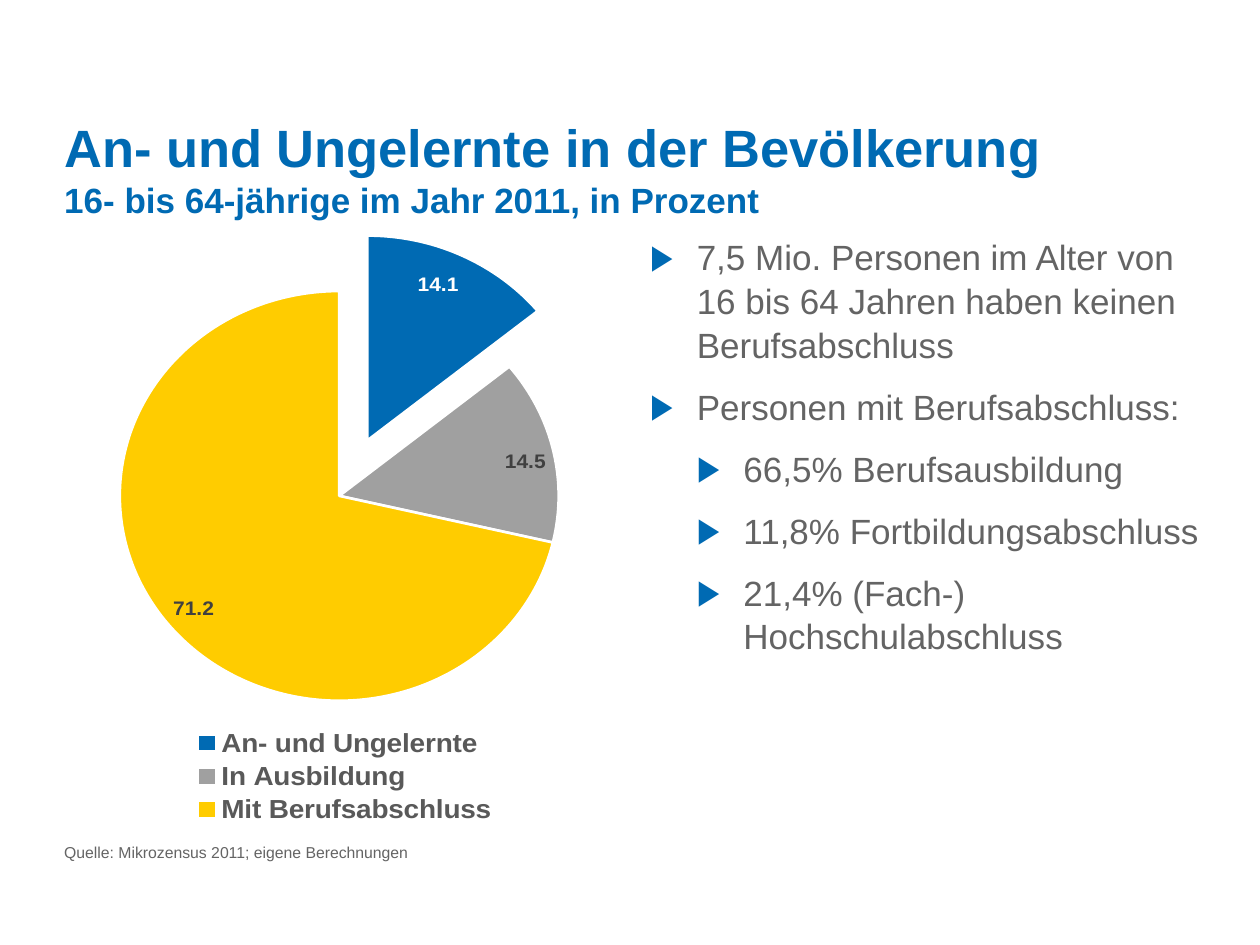
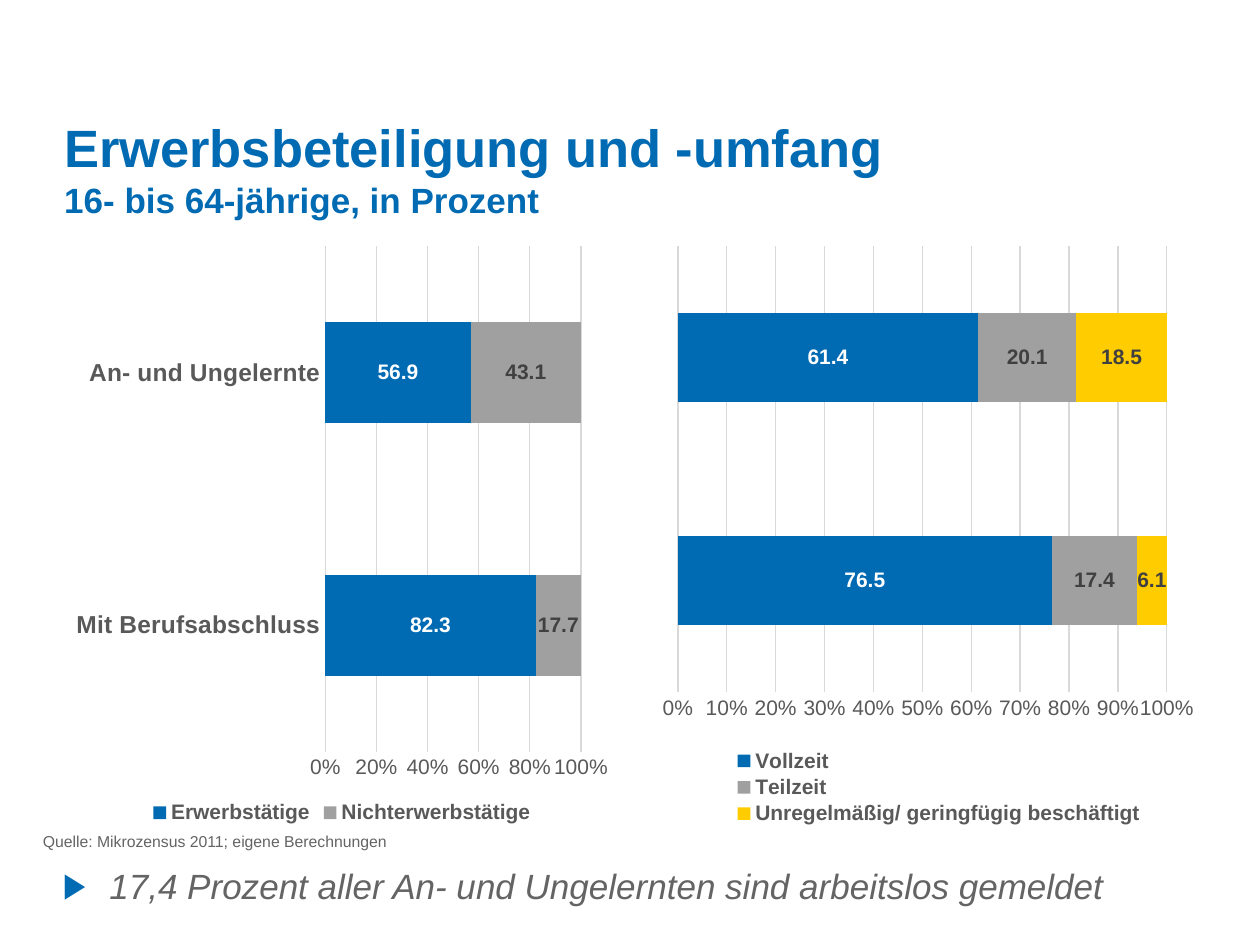
from dataclasses import dataclass
from typing import NamedTuple, Optional

from pptx import Presentation
from pptx.chart.data import CategoryChartData
from pptx.dml.color import RGBColor
from pptx.enum.chart import XL_CHART_TYPE, XL_LABEL_POSITION, XL_LEGEND_POSITION, XL_TICK_MARK
from pptx.enum.text import MSO_ANCHOR
from pptx.oxml import parse_xml
from pptx.oxml.ns import nsdecls, qn
from pptx.util import Inches, Pt

# Shared look
FONT = "Arial"
BLUE, GREY, YELLOW = PALETTE = ("006AB3", "A0A0A0", "FFCC00")
TEXT, AXIS, LABEL, GRID, WHITE = "646464", "595959", "404040", "D9D9D9", "FFFFFF"
SOURCE = "Quelle: Mikrozensus 2011; eigene Berechnungen"

# Two-column grid, in inches
MARGIN, COLUMN, GUTTER = 0.51, 4.41, 0.24
FULL = 2 * COLUMN + GUTTER
BODY_TOP, BODY_HEIGHT = 1.86, 4.72
INDENT = 0.37


class Box(NamedTuple):
    left: float
    top: float
    width: float
    height: float


class Bullet(NamedTuple):
    text: str
    level: int = 0
    italic: bool = False


@dataclass
class BarChart:
    column: int
    categories: tuple[str, ...]
    series: dict[str, tuple[float, ...]]
    plot: Box
    step: float
    show_categories: bool = True
    legend: Optional[Box] = None


def rgb(color: str) -> RGBColor:
    return RGBColor.from_string(color)


def column_box(column: int) -> Box:
    return Box(MARGIN + column * (COLUMN + GUTTER), BODY_TOP, COLUMN, BODY_HEIGHT)


def style_font(font, size: float, color: str, bold: bool = False, italic: bool = False) -> None:
    font.name, font.size = FONT, Pt(size)
    font.bold, font.italic = bold, italic
    font.color.rgb = rgb(color)


def fill_shape(fmt, color: str) -> None:
    fmt.fill.solid()
    fmt.fill.fore_color.rgb = rgb(color)


# Text
def add_text_frame(s, box: Box, anchor=MSO_ANCHOR.TOP, inset: Optional[float] = 0):
    tf = s.shapes.add_textbox(*map(Inches, box)).text_frame
    tf.word_wrap = True
    tf.vertical_anchor = anchor
    if inset is not None:
        tf.margin_left = tf.margin_right = tf.margin_top = tf.margin_bottom = Inches(inset)
    return tf


def add_run(p, text: str, size: float, color: str, **style: bool) -> None:
    r = p.add_run()
    r.text = text
    style_font(r.font, size, color, **style)


def add_title(s, title: str, subtitle: str) -> None:
    tf = add_text_frame(s, Box(MARGIN, 0.91, FULL, 0.84), MSO_ANCHOR.BOTTOM)
    p = tf.paragraphs[0]
    add_run(p, title, 30, BLUE, bold=True)
    p.add_line_break()
    add_run(p, subtitle, 20, BLUE, bold=True)


def add_source(s, left: float, top: float) -> None:
    tf = add_text_frame(s, Box(left, top, FULL, 0.2))
    add_run(tf.paragraphs[0], SOURCE, 9, TEXT)


def add_bullets(tf, bullets: list[Bullet]) -> None:
    for i, bullet in enumerate(bullets):
        p = tf.add_paragraph() if i else tf.paragraphs[0]
        ppr = p._p.get_or_add_pPr()
        ppr.set("marL", str(Inches(INDENT * (bullet.level + 1))))
        ppr.set("indent", str(-Inches(INDENT)))
        for xml in (
            f'<a:buClr {nsdecls("a")}><a:srgbClr val="{BLUE}"/></a:buClr>',
            f'<a:buFont {nsdecls("a")} typeface="{FONT}"/>',
            f'<a:buChar {nsdecls("a")} char="▶"/>',
        ):
            ppr.append(parse_xml(xml))
        if len(bullets) > 1:
            p.line_spacing = 1.04
        if i:
            p.space_before = Pt(10.5)
        add_run(p, bullet.text, 20, TEXT, italic=bullet.italic)


# Charts
def set_layout(parent, index: int, area: Box, inner: bool = False) -> None:
    """Place a plot area or legend by shares of the chart's size."""
    for old in parent.findall(qn("c:layout")):
        parent.remove(old)
    target = '<c:layoutTarget val="inner"/>' if inner else ""
    modes = '<c:xMode val="edge"/><c:yMode val="edge"/>'
    sizes = "".join(f'<c:{k} val="{v}"/>' for k, v in zip("xywh", area))
    parent.insert(index, parse_xml(
        f'<c:layout {nsdecls("c")}><c:manualLayout>{target}{modes}{sizes}'
        "</c:manualLayout></c:layout>"))


def add_chart(s, kind, column: int, categories, series, plot: Box,
              legend: Optional[Box], legend_size: float):
    data = CategoryChartData()
    data.categories = categories
    for name, values in series.items():
        data.add_series(name, values)
    chart = s.shapes.add_chart(kind, *map(Inches, column_box(column)), data).chart
    chart.has_title = False
    style_font(chart.font, 10, "000000")
    set_layout(chart._chartSpace.chart.plotArea, 0, plot, inner=True)
    chart.has_legend = True
    chart.legend.position = XL_LEGEND_POSITION.BOTTOM
    chart.legend.include_in_layout = False
    style_font(chart.legend.font, legend_size, AXIS, bold=True)
    if legend:
        set_layout(chart.legend._element, 1, legend)
    return chart


def style_labels(labels, position, color: str, number_format: str) -> None:
    labels.show_value = True
    labels.number_format, labels.number_format_is_linked = number_format, False
    labels.position = position
    style_font(labels.font, 12, color, bold=True)


def add_pie(s, categories, values) -> None:
    chart = add_chart(s, XL_CHART_TYPE.PIE, 0, categories, {"Series 1": values},
                      Box(0.1, 0.03, 0.79, 0.74), Box(0.23, 0.81, 0.55, 0.19), 16)
    plot = chart.plots[0]
    plot.vary_by_categories = True
    series = plot.series[0]
    for i, color in enumerate(PALETTE):
        fmt = series.points[i].format
        fill_shape(fmt, color)
        fmt.line.color.rgb = rgb(WHITE)
        fmt.line.width = Pt(1.5)
    # First slice pulled out by 30 %
    first = series._element.find(qn("c:dPt"))
    first.find(qn("c:idx")).addnext(parse_xml(f'<c:explosion {nsdecls("c")} val="30"/>'))
    style_labels(series.data_labels, XL_LABEL_POSITION.INSIDE_END, LABEL, "#,##0.0")
    label = series.points[0].data_label
    style_font(label.font, 12, WHITE, bold=True)
    label.position = XL_LABEL_POSITION.INSIDE_END


def add_bars(s, spec: BarChart) -> None:
    chart = add_chart(s, XL_CHART_TYPE.BAR_STACKED_100, spec.column, spec.categories,
                      spec.series, spec.plot, spec.legend, 12)
    plot = chart.plots[0]
    plot.vary_by_categories = False
    plot.gap_width, plot.overlap = 150, 100
    for series, color in zip(plot.series, PALETTE):
        fill_shape(series.format, color)
        style_labels(series.data_labels, XL_LABEL_POSITION.CENTER,
                     WHITE if color == BLUE else LABEL, "General")

    cat, val = chart.category_axis, chart.value_axis
    for axis in (cat, val):
        axis.major_tick_mark = axis.minor_tick_mark = XL_TICK_MARK.NONE
    cat.visible = spec.show_categories
    if spec.show_categories:
        style_font(cat.tick_labels.font, 14, AXIS, bold=True)
        cat.format.line.color.rgb = rgb(GRID)
        cat.format.line.width = Pt(0.75)
    val.minimum_scale, val.maximum_scale, val.major_unit = 0, 1, spec.step
    val.tick_labels.number_format = "0%"
    val.tick_labels.number_format_is_linked = False
    style_font(val.tick_labels.font, 12, AXIS)
    val.format.line.fill.background()
    val.has_major_gridlines = True
    val.major_gridlines.format.line.color.rgb = rgb(GRID)
    val.major_gridlines.format.line.width = Pt(0.75)


# Slides
def build_population(s) -> None:
    add_title(s, "An- und Ungelernte in der Bevölkerung",
              "16- bis 64-jährige im Jahr 2011, in Prozent")
    add_pie(s, ("An- und Ungelernte", "In Ausbildung", "Mit Berufsabschluss"),
            (14.1, 14.5, 71.2))
    add_bullets(add_text_frame(s, column_box(1)), [
        Bullet("7,5 Mio. Personen im Alter von 16 bis 64 Jahren haben keinen Berufsabschluss"),
        Bullet("Personen mit Berufsabschluss:"),
        Bullet("66,5% Berufsausbildung", 1),
        Bullet("11,8% Fortbildungsabschluss", 1),
        Bullet("21,4% (Fach-) Hochschulabschluss", 1),
    ])
    add_source(s, MARGIN, 6.69)


def build_employment(s) -> None:
    add_title(s, "Erwerbsbeteiligung und -umfang", "16- bis 64-jährige, in Prozent")
    add_bars(s, BarChart(
        0, ("Mit Berufsabschluss", "An- und Ungelernte"),
        {"Erwerbstätige": (82.3, 56.9), "Nichterwerbstätige": (17.7, 43.1)},
        plot=Box(0.47, 0.02, 0.46, 0.85), step=0.2))
    add_bars(s, BarChart(
        1, ("1", "2"),
        {"Vollzeit": (76.5, 61.4), "Teilzeit": (17.4, 20.1),
         "Unregelmäßig/ geringfügig beschäftigt": (6.1, 18.5)},
        plot=Box(0.05, 0.02, 0.88, 0.75), step=0.1, show_categories=False,
        legend=Box(0.13, 0.86, 0.78, 0.14)))
    add_source(s, 0.34, 6.6)
    tf = add_text_frame(s, Box(0.4, 6.81, 8.94, 0.44), inset=None)
    add_bullets(tf, [Bullet("17,4 Prozent aller An- und Ungelernten sind arbeitslos gemeldet",
                            italic=True)])


def main() -> None:
    prs = Presentation()
    prs.slide_width, prs.slide_height = Inches(10), Inches(7.5)
    for build in (build_population, build_employment):
        build(prs.slides.add_slide(prs.slide_layouts[6]))
    prs.save("out.pptx")


if __name__ == "__main__":
    main()
